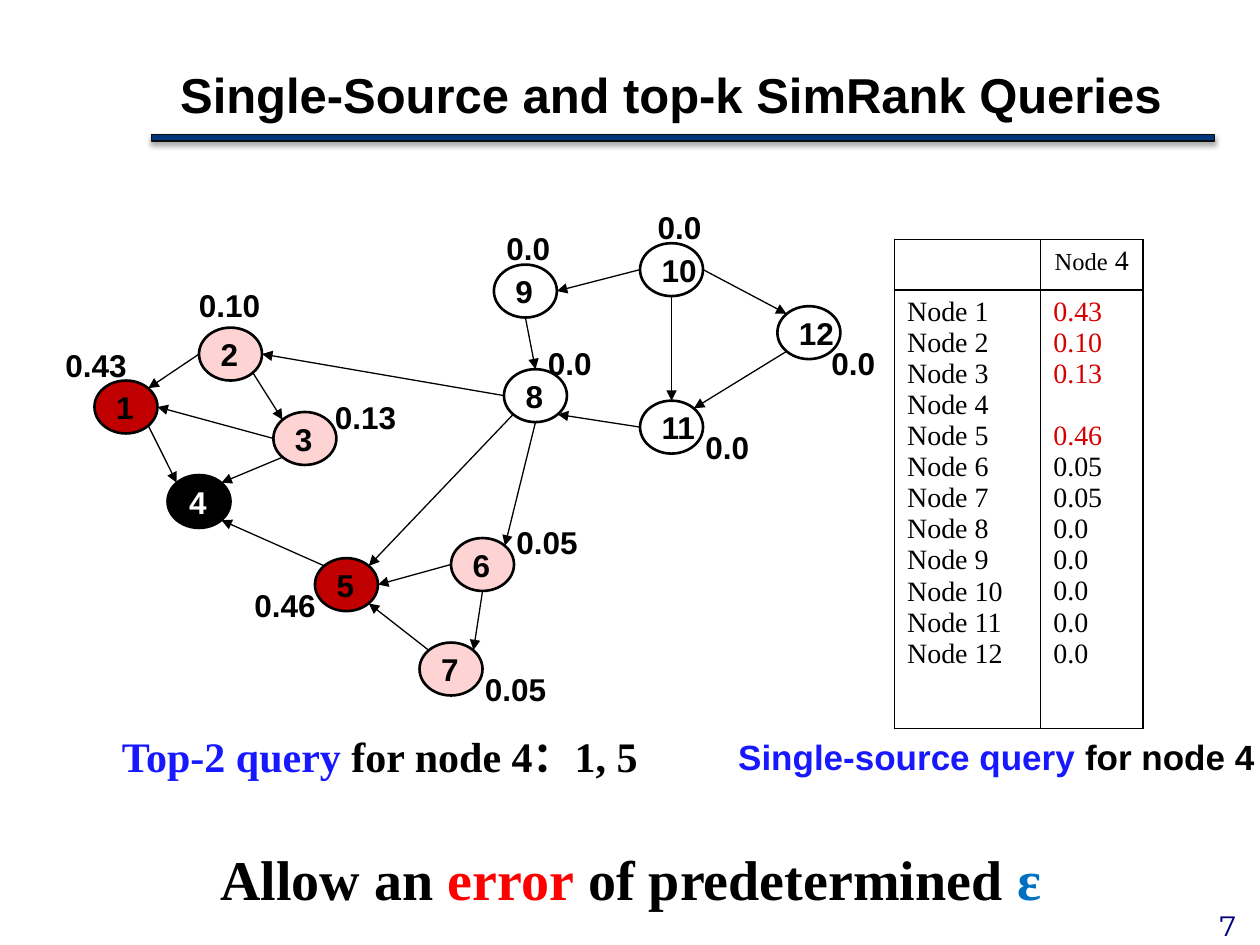
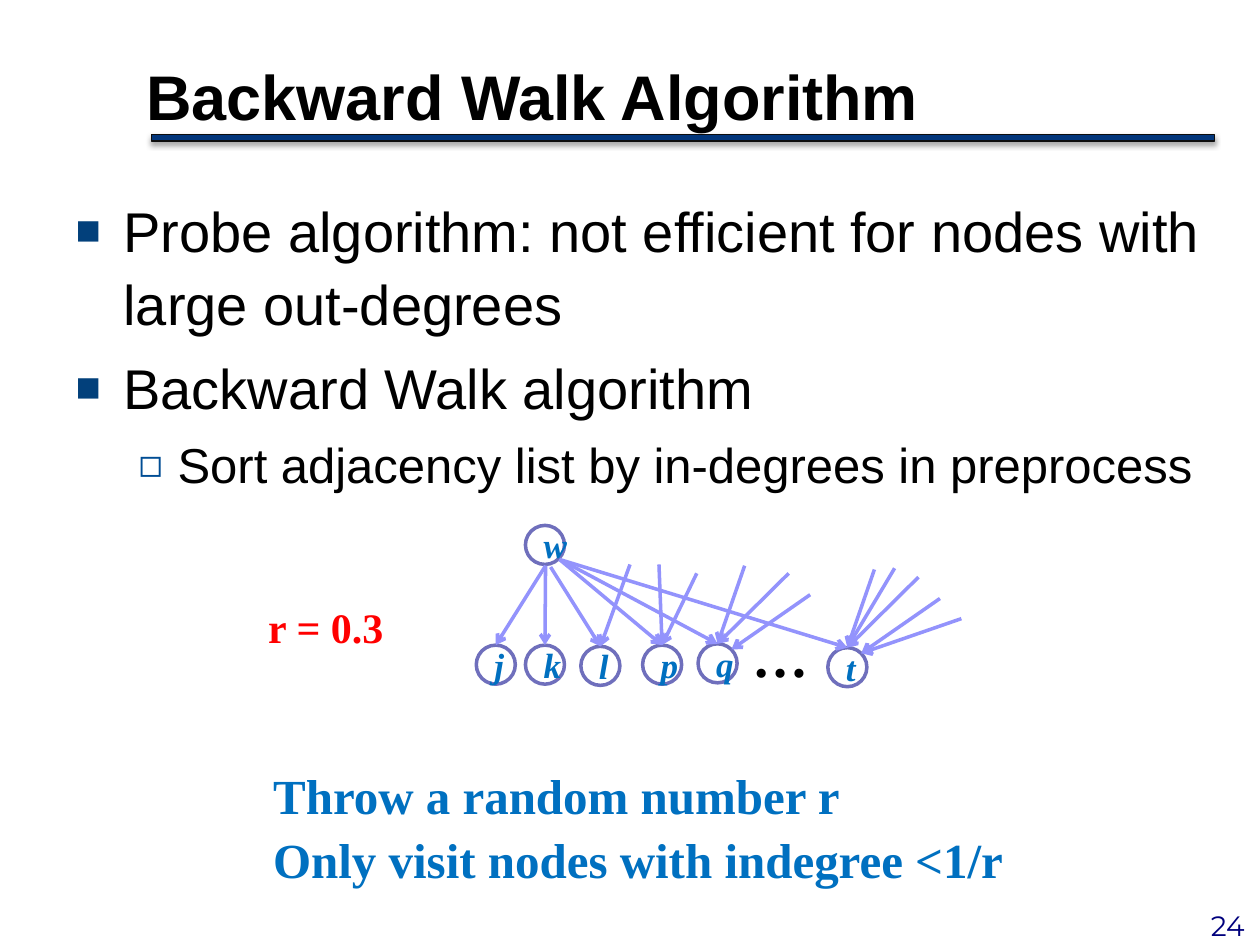
import pptx
import pptx.dml.color
import pptx.enum.dml
import pptx.enum.shapes
import pptx.enum.text
import pptx.oxml
import pptx.oxml.ns
import pptx.util
from lxml import etree
from pptx.util import Inches

BLACK, WHITE, RED = "000000", "FFFFFF", "FF0000"
BAND, BLUE, AZURE, NAVY = "02367B", "1818FF", "0070C0", "00007D"
CRIMSON, PINK, SCORE_RED = "C00000", "FDD4D3", "D60000"
RING, ARROW = "6F6FBC", "9393FC"
SANS, SERIF, NUMBERS = "Arial", "Times New Roman", "Montserrat"
LEFT, CENTER = pptx.enum.text.PP_ALIGN.LEFT, pptx.enum.text.PP_ALIGN.CENTER
MIDDLE = pptx.enum.text.MSO_ANCHOR.MIDDLE
OVAL = pptx.enum.shapes.MSO_SHAPE.OVAL
RECTANGLE = pptx.enum.shapes.MSO_SHAPE.RECTANGLE
STRAIGHT = pptx.enum.shapes.MSO_CONNECTOR.STRAIGHT
DIAGONAL = 0.71
SITES = {
    "top": (0, -1), "bottom": (0, 1), "left": (-1, 0), "right": (1, 0),
    "top left": (-DIAGONAL, -DIAGONAL), "top right": (DIAGONAL, -DIAGONAL),
    "bottom left": (-DIAGONAL, DIAGONAL), "bottom right": (DIAGONAL, DIAGONAL),
}

GRAPH_NODES = {
    1: (0.75, 3.02, CRIMSON), 2: (1.58, 2.6, PINK), 3: (2.17, 3.27, PINK),
    4: (1.33, 3.77, BLACK), 5: (2.5, 4.43, CRIMSON), 6: (3.58, 4.27, PINK),
    7: (3.33, 5.1, PINK), 8: (4, 2.93, None), 9: (3.92, 2.1, None),
    10: (5.08, 1.93, None), 11: (5.08, 3.18, None), 12: (6.17, 2.43, None),
}
GRAPH_EDGES = [
    (2, "left", 1, "top right"), (2, "bottom right", 3, "top left"),
    (8, "left", 2, "right"), (3, "bottom left", 4, "top right"),
    (1, "bottom right", 4, "top left"), (3, "left", 1, "right"),
    (8, "bottom", 6, "top right"), (8, "bottom left", 5, "top right"),
    (6, "left", 5, "right"), (6, "bottom", 7, "top right"),
    (7, "top left", 5, "bottom right"), (5, "top left", 4, "bottom right"),
    (11, "left", 8, "bottom right"), (10, "bottom", 11, "top"),
    (10, "left", 9, "right"), (9, "bottom", 8, "top"),
    (10, "right", 12, "top left"), (12, "bottom left", 11, "top right"),
]
SCORES = {1: "0.43", 2: "0.10", 3: "0.13", 5: "0.46", 6: "0.05", 7: "0.05",
          8: "0.0", 9: "0.0", 10: "0.0", 11: "0.0", 12: "0.0"}
SCORE_PLACES = {
    1: (0.42, 2.7), 2: (1.48, 2.22), 3: (2.56, 3.11), 5: (1.92, 4.6),
    6: (4, 4.1), 7: (3.75, 5.27), 8: (4.25, 2.68), 9: (3.92, 1.77),
    10: (5.12, 1.6), 11: (5.5, 3.35), 12: (6.5, 2.68),
}
WALK_NODES = {"w": (4.17, 4.17), "j": (3.78, 5.12), "k": (4.17, 5.12), "l": (4.61, 5.13),
              "p": (5.1, 5.12), "q": (5.54, 5.11), "t": (6.57, 5.14)}
WALK_ARROWS = [
    ("j", "top", [(4.33, 4.49)]),
    ("k", "top", [(4.33, 4.49)]),
    ("l", "top", [(4.37, 4.5), (5, 4.48)]),
    ("p", "top", [(4.44, 4.44), (5.23, 4.48), (5.53, 4.55)]),
    ("q", "top", [(4.48, 4.46), (5.91, 4.49), (6.26, 4.55)]),
    ("q", "top right", [(6.43, 4.72)]),
    ("t", "top", [(4.44, 4.44), (6.94, 4.52), (7.1, 4.51), (7.29, 4.58)]),
    ("t", "top right", [(7.46, 4.75), (7.63, 4.91)]),
]


def rgb(value):
    """Turn a hex string into a colour."""
    return pptx.dml.color.RGBColor.from_string(value)


def add_element(parent, tag, **attributes):
    """Append a drawing element to its parent."""
    values = {name: str(value) for name, value in attributes.items()}
    return etree.SubElement(parent, pptx.oxml.ns.qn(tag), values)


def write(para, spans, size=18, font=SANS, color=BLACK, bold=False, italic=False,
          align=LEFT, before=0, spacing=None):
    """Write a string, or (text, changes) spans, into a paragraph."""
    para.alignment = align
    para.space_before = pptx.util.Pt(before)
    if spacing:
        para.line_spacing = spacing
    for text, changes in [(spans, {})] if isinstance(spans, str) else spans:
        span = para.add_run()
        span.text = text
        span.font.name = font
        span.font.size = pptx.util.Pt(changes.get("size", size))
        span.font.bold = bold
        span.font.italic = italic
        span.font.color.rgb = rgb(changes.get("color", color))


def add_lines(frame, lines, **style):
    """Write each line as a paragraph of the frame."""
    for index, line in enumerate(lines):
        para = frame.add_paragraph() if index else frame.paragraphs[0]
        write(para, line, **style)


def add_text(page, place, lines, wrap=False, **style):
    """Add a text box."""
    box = page.shapes.add_textbox(*map(Inches, place))
    box.text_frame.word_wrap = wrap
    add_lines(box.text_frame, lines, **style)


def place_shape(shape, place):
    """Move and size a placeholder."""
    shape.left, shape.top, shape.width, shape.height = map(Inches, place)


def add_band(page):
    """Add the shadowed band below the title."""
    band = page.shapes.add_shape(RECTANGLE, *map(Inches, (1.2, 1.07, 8.44, 0.05)))
    band.shadow.inherit = False
    band.fill.solid()
    band.fill.fore_color.rgb = rgb(BAND)
    band.line.color.rgb = rgb("0D0D0D")
    band.line.width = pptx.util.Pt(0.75)
    effects = band._element.spPr.find(pptx.oxml.ns.qn("a:effectLst"))
    shadow = add_element(effects, "a:outerShdw", blurRad=pptx.util.Pt(3.1),
                         dist=pptx.util.Pt(1.8), dir=90 * 60000, rotWithShape=0)
    shade = add_element(shadow, "a:srgbClr", val=BLACK)
    add_element(shade, "a:alpha", val=35000)


def add_page(deck, layout, title, title_place, title_size, number):
    """Add a slide with its title, band and number."""
    page = deck.slides.add_slide(deck.slide_layouts[layout])
    add_band(page)
    add_text(page, (9.33, 7.16, 0.83, 0.37), [number], wrap=True, size=16,
             font=NUMBERS, color=NAVY, align=CENTER)
    heading = page.shapes.title
    place_shape(heading, title_place)
    frame = heading.text_frame
    frame.auto_size = pptx.enum.text.MSO_AUTO_SIZE.NONE
    frame.vertical_anchor = MIDDLE
    write(frame.paragraphs[0], title, size=title_size, bold=True)
    return page


def add_node(page, place, text, fill, line, width, wrap, **style):
    """Add a labelled ellipse."""
    node = page.shapes.add_shape(OVAL, *map(Inches, place))
    node.shadow.inherit = False
    if fill:
        node.fill.solid()
        node.fill.fore_color.rgb = rgb(fill)
    else:
        node.fill.background()
    node.line.color.rgb = rgb(line)
    node.line.width = pptx.util.Pt(width)
    node.text_frame.word_wrap = wrap
    node.text_frame.vertical_anchor = MIDDLE
    write(node.text_frame.paragraphs[0], text, bold=True, **style)


def site(corner, size, name):
    """Find the named point on the outline of an ellipse."""
    return [start + length / 2 * (1 + side)
            for start, length, side in zip(corner, size, SITES[name])]


def add_arrow(page, start, end, color, width, head):
    """Add a straight arrow."""
    arrow = page.shapes.add_connector(STRAIGHT, *map(Inches, (*start, *end)))
    arrow.line.color.rgb = rgb(color)
    arrow.line.width = pptx.util.Pt(width)
    add_element(arrow.line._get_or_add_ln(), "a:tailEnd", type=head)
    add_element(arrow._element.spPr, "a:effectLst")


def frame_cell(cell):
    """Clear the fill of a cell and draw its four borders."""
    properties = cell._tc.get_or_add_tcPr()
    for side in ("a:lnL", "a:lnR", "a:lnT", "a:lnB"):
        border = add_element(properties, side, w=pptx.util.Pt(1))
        add_element(add_element(border, "a:solidFill"), "a:srgbClr", val=BLACK)
    cell.fill.background()


def add_score_table(page):
    """Add the table of similarity scores."""
    table = page.shapes.add_table(2, 2, *map(Inches, (7.1, 1.9, 1.97, 3.84))).table
    table.first_row = table.horz_banding = False
    for column, width in zip(table.columns, (1.16, 0.81)):
        column.width = Inches(width)
    for row, height in zip(table.rows, (0.36, 3.48)):
        row.height = Inches(height)
    for cell in table.iter_cells():
        frame_cell(cell)
    header = [("Node", {}), (" 4", {"size": 16})]
    add_lines(table.cell(0, 1).text_frame, [header], size=14, font=SERIF, align=CENTER)
    names = [f"Node {node}" for node in GRAPH_NODES]
    add_lines(table.cell(1, 0).text_frame, names, size=16, font=SERIF)
    frame = table.cell(1, 1).text_frame
    for node, score in SCORES.items():
        para = frame.paragraphs[0] if node == 1 else frame.add_paragraph()
        write(para, score, size=16, font=SERIF, before=17.7 if node == 5 else 0,
              color=SCORE_RED if float(score) >= 0.1 else BLACK)


def add_bullet(para, mark, color, percent, margin, hanging):
    """Give a paragraph a coloured bullet and a hanging indent."""
    properties = para._p.get_or_add_pPr()
    properties.set("marL", str(Inches(margin)))
    properties.set("indent", str(-Inches(hanging)))
    add_element(add_element(properties, "a:buClr"), "a:srgbClr", val=color)
    add_element(properties, "a:buSzPct", val=percent * 1000)
    add_element(properties, "a:buFont", typeface=SANS)
    add_element(properties, "a:buChar", char=mark)


def add_bullets(body, items):
    """Fill the body placeholder with (level, text) items."""
    styles = [(32, ("■", "02407B", 75, 0.38, 0.38)), (28, ("◻", "004D94", 80, 0.81, 0.31))]
    place_shape(body, (0.5, 1.47, 9.38, 5.43))
    frame = body.text_frame
    frame.auto_size = pptx.enum.text.MSO_AUTO_SIZE.NONE
    for index, (level, text) in enumerate(items):
        para = frame.add_paragraph() if index else frame.paragraphs[0]
        size, bullet = styles[level]
        para.level = level
        add_bullet(para, *bullet)
        write(para, text, size=size, before=size * 0.2 if index else 0, spacing=1.08)


def build_queries(deck):
    """Build the slide on SimRank queries."""
    page = add_page(deck, 5, "Single-Source and top-k SimRank Queries",
                    (1.33, 0.13, 8.05, 1.23), 28, "7")
    add_score_table(page)
    size = (0.5, 0.42)
    for node, (left, top, fill) in GRAPH_NODES.items():
        add_node(page, (left, top, *size), str(node), fill, BLACK, 1.5, False,
                 color=WHITE if fill == BLACK else BLACK)
    for node, place in SCORE_PLACES.items():
        width = 0.69 if len(SCORES[node]) == 4 else 0.55
        add_text(page, (*place, width, 0.4), [SCORES[node]], bold=True)
    for source, leaving, target, entering in GRAPH_EDGES:
        add_arrow(page, site(GRAPH_NODES[source][:2], size, leaving),
                  site(GRAPH_NODES[target][:2], size, entering), BLACK, 0.75, "triangle")
    add_text(page, (5.76, 5.79, 4.41, 0.44),
             [[("Single-source query ", {"color": BLUE}), ("for node 4", {})]],
             wrap=True, size=20, bold=True)
    add_text(page, (0.87, 5.72, 4.34, 0.5),
             [[("Top-2 query ", {"color": BLUE}), ("for node 4：1, 5", {})]],
             wrap=True, size=24, font=SERIF, bold=True, spacing=1.08)
    add_text(page, (1.65, 6.61, 8.45, 0.64),
             [[("Allow an ", {}), ("error", {"color": RED}),
               (" of predetermined ", {}), ("ε", {"color": AZURE})]],
             wrap=True, size=32, font=SERIF, bold=True, spacing=1.08)


def build_backward_walk(deck):
    """Build the slide on the backward walk."""
    page = add_page(deck, 1, "Backward Walk Algorithm", (1.06, 0.14, 9.18, 1.23), 36, "24")
    add_bullets(page.placeholders[1], [
        (0, "Probe algorithm: not efficient for nodes with large out-degrees"),
        (0, "Backward Walk algorithm"),
        (1, "Sort adjacency list by in-degrees in preprocess"),
    ])
    style = {"font": SERIF, "bold": True, "spacing": 1.08}
    add_text(page, (2.07, 5.99, 6.06, 1.38),
             ["Throw a random number r", "Only visit nodes with indegree <1/r"],
             size=28, color=AZURE, **style)
    add_text(page, (2.03, 4.69, 1.12, 0.5), ["r = 0.3"], size=24, color=RED, **style)
    add_text(page, (5.87, 4.84, 0.65, 0.64), ["…"], size=32, **style)
    size = (0.31, 0.31)
    for name, corner in WALK_NODES.items():
        add_node(page, (*corner, *size), name, None, RING, 2, True, size=20,
                 font=SERIF, color=AZURE, italic=True, align=CENTER)
    for target, entering, starts in WALK_ARROWS:
        for start in starts:
            add_arrow(page, start, site(WALK_NODES[target], size, entering), ARROW, 2, "arrow")


def main():
    """Build and save the deck."""
    deck = pptx.Presentation()
    deck.slide_width, deck.slide_height = Inches(10), Inches(7.5)
    build_queries(deck)
    build_backward_walk(deck)
    deck.save("out.pptx")


if __name__ == "__main__":
    main()
